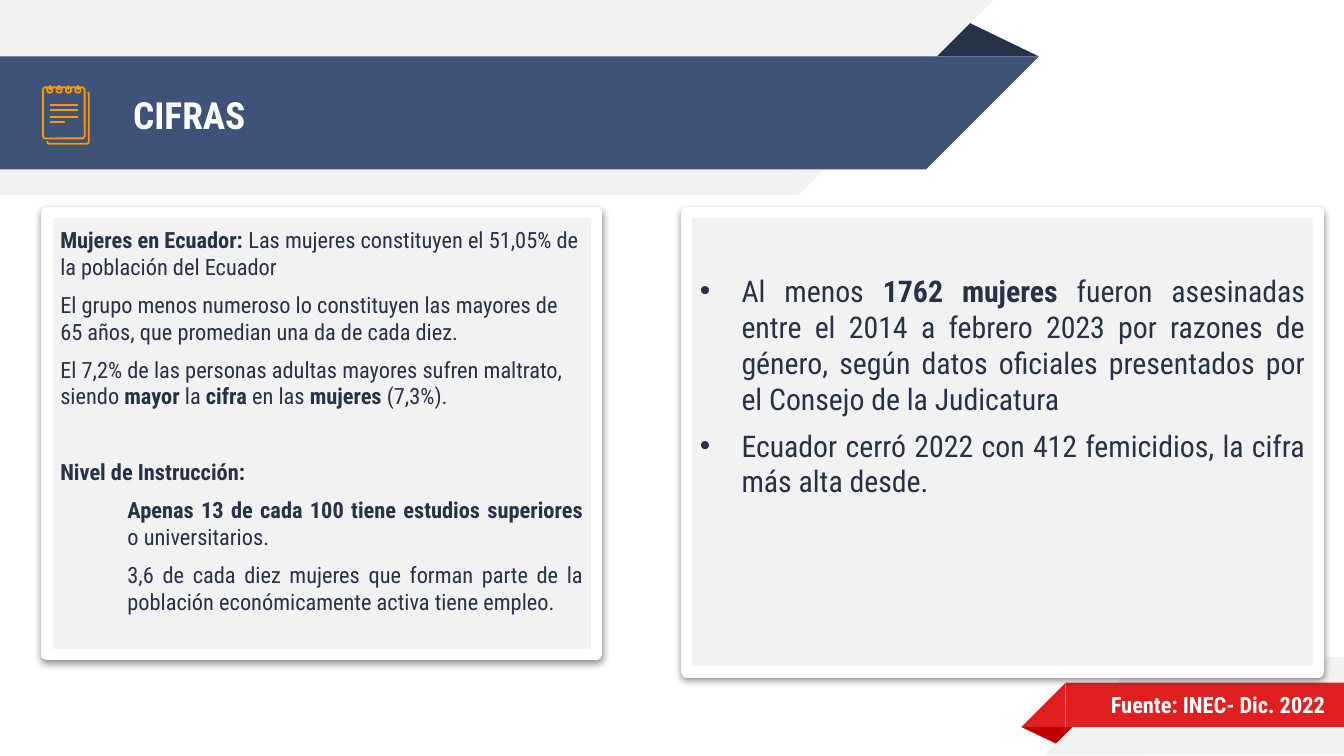
from dataclasses import dataclass

from lxml.etree import SubElement
from pptx import Presentation
from pptx.dml.color import RGBColor
from pptx.enum.shapes import MSO_CONNECTOR as Link, MSO_SHAPE as Preset
from pptx.enum.text import MSO_ANCHOR as Anchor, PP_ALIGN as Align
from pptx.oxml import parse_xml
from pptx.oxml.ns import nsdecls, qn
from pptx.util import Inches, Pt

FONT = "Roboto Condensed"
COLORS = {
    "navy": "263248", "blue": "3F5378", "gray": "F2F2F2", "white": "FFFFFF",
    "red": "E02020", "dark_red": "C00000", "orange": "FF9800",
}


@dataclass(frozen=True)
class Block:
    preset: Preset
    left: float
    top: float
    width: float
    height: float
    color: str
    rotation: int = 0


@dataclass(frozen=True)
class Paragraph:
    spans: tuple[tuple[str, bool], ...]  # text and whether it is bold
    before: float = 6
    indent: float = 0
    justified: bool = False
    bullet: bool = False


def rgb(name: str) -> RGBColor:
    return RGBColor.from_string(COLORS[name])


def draw_block(page, block: Block) -> None:
    shape = page.shapes.add_shape(block.preset, Inches(block.left), Inches(block.top),
                                  Inches(block.width), Inches(block.height))
    shape.shadow.inherit = False
    shape.fill.solid()
    shape.fill.fore_color.rgb = rgb(block.color)
    shape.line.fill.background()
    shape.rotation = block.rotation
    if block.preset == Preset.ISOSCELES_TRIANGLE:
        shape.adjustments[0] = 0.32


def add_span(para, text: str, size: float, color: str, bold: bool) -> None:
    span = para.add_run()
    span.text = text
    span.font.name = FONT
    span.font.size = Pt(size)
    span.font.bold = bold
    span.font.color.rgb = rgb(color)


def set_frame(box, anchor: Anchor, top_inset: float = 0.1):
    frame = box.text_frame
    frame.word_wrap = True
    frame.vertical_anchor = anchor
    frame.margin_left = frame.margin_right = frame.margin_bottom = Inches(0.1)
    frame.margin_top = Inches(top_inset)
    return frame


def set_indent(para, item: Paragraph) -> None:
    props = para._p.get_or_add_pPr()
    props.set("marL", str(Inches(item.indent)))
    if item.bullet:
        props.set("indent", str(-Inches(item.indent)))
        color = SubElement(props, qn("a:buClr"))
        SubElement(color, qn("a:srgbClr"), val=COLORS["navy"])
        SubElement(props, qn("a:buFont"), typeface="Arial")
        SubElement(props, qn("a:buChar"), char="•")


def draw_panel(page, left: float, width: float, height: float, size: float,
               items: list[Paragraph], top_inset: float = 0.1) -> None:
    box = page.shapes.add_textbox(Inches(left), Inches(1.58), Inches(width), Inches(height))
    box.fill.solid()
    box.fill.fore_color.rgb = rgb("gray")
    box.line.color.rgb = rgb("white")
    box.line.width = Pt(6)
    box._element.spPr.append(parse_xml(
        f'<a:effectLst {nsdecls("a")}><a:outerShdw blurRad="50800" dist="19050" dir="5400000">'
        '<a:srgbClr val="000000"><a:alpha val="45000"/></a:srgbClr>'
        '</a:outerShdw></a:effectLst>'))
    frame = set_frame(box, Anchor.TOP, top_inset)
    for index, item in enumerate(items):
        para = frame.add_paragraph() if index else frame.paragraphs[0]
        para.alignment = Align.JUSTIFY if item.justified else Align.LEFT
        para.space_before = Pt(item.before if index else 0)
        set_indent(para, item)
        for text, bold in item.spans:
            add_span(para, text, size, "navy", bold)


def outline(shape) -> None:
    shape.shadow.inherit = False
    shape.fill.background()
    shape.line.color.rgb = rgb("orange")
    shape.line.width = Pt(0.96)


def draw_stroke(page, x1: float, y1: float, x2: float, y2: float) -> None:
    stroke = page.shapes.add_connector(Link.STRAIGHT, Inches(x1), Inches(y1),
                                       Inches(x2), Inches(y2))
    stroke.line.color.rgb = rgb("orange")
    stroke.line.width = Pt(0.96)
    SubElement(stroke._element.spPr, qn("a:effectLst"))


def draw_notepad(page) -> None:
    # Back sheet, then front sheet
    edge = [(0.35, 1.05), (0.36, 1.07), (0.37, 1.07), (0.65, 1.07),
            (0.66, 1.06), (0.66, 1.05), (0.66, 0.7), (0.66, 0.69), (0.65, 0.69)]
    points = [(Inches(x), Inches(y)) for x, y in edge]
    builder = page.shapes.build_freeform(*points[0])
    builder.add_line_segments(points[1:], close=False)
    outline(builder.convert_to_shape())
    sheet = page.shapes.add_shape(Preset.ROUNDED_RECTANGLE, Inches(0.32), Inches(0.65),
                                  Inches(0.31), Inches(0.38))
    sheet.adjustments[0] = 0.06
    outline(sheet)

    # Binding rings with their pins
    for ring in range(4):
        center = 0.37 + 0.07 * ring
        outline(page.shapes.add_shape(Preset.OVAL, Inches(center - 0.02), Inches(0.65),
                                      Inches(0.04), Inches(0.04)))
        draw_stroke(page, center, 0.63, center, 0.67)

    # Written lines
    for y, right in ((0.78, 0.58), (0.82, 0.58), (0.87, 0.58), (0.91, 0.48)):
        draw_stroke(page, 0.37, y, right, y)


BLOCKS = [
    # Title banner
    Block(Preset.ISOSCELES_TRIANGLE, 6.88, 0.14, 0.85, 0.28, "navy"),
    Block(Preset.RECTANGLE, 0, 0, 5.94, 1.45, "gray"),
    Block(Preset.RIGHT_TRIANGLE, 5.94, 0, 1.45, 1.45, "gray", 90),
    Block(Preset.RECTANGLE, 0, 0.42, 6.89, 0.84, "blue"),
    Block(Preset.RIGHT_TRIANGLE, 6.89, 0.42, 0.84, 0.84, "blue", 90),
    # Source ribbon
    Block(Preset.ISOSCELES_TRIANGLE, 7.6, 5.41, 0.43, 0.14, "dark_red", 180),
    Block(Preset.RECTANGLE, 8.5, 4.89, 1.5, 0.73, "gray"),
    Block(Preset.RIGHT_TRIANGLE, 7.77, 4.89, 0.73, 0.73, "gray", 270),
    Block(Preset.RECTANGLE, 7.93, 5.08, 2.08, 0.33, "red"),
    Block(Preset.RIGHT_TRIANGLE, 7.6, 5.08, 0.33, 0.33, "red", 270),
]

POPULATION = [
    Paragraph((("Mujeres en Ecuador: ", True),
               ("Las mujeres constituyen el 51,05% de la población del Ecuador", False))),
    Paragraph((("El grupo menos numeroso lo constituyen las mayores de 65 años, "
                "que promedian una da de cada diez.", False),)),
    Paragraph((("El 7,2% de las personas adultas mayores sufren maltrato, siendo ", False),
               ("mayor", True), (" la ", False), ("cifra", True), (" en las ", False),
               ("mujeres", True), (" (7,3%).", False))),
    Paragraph((("Nivel de Instrucción:", True),), before=26),
    Paragraph((("Apenas 13 de cada 100 tiene estudios superiores", True),
               (" o universitarios.", False)), indent=0.5, justified=True),
    Paragraph((("3,6 de cada diez mujeres que forman parte de la población "
                "económicamente activa tiene empleo.", False),), indent=0.5, justified=True),
]

VIOLENCE = [
    Paragraph((("Al menos ", False), ("1762 mujeres", True),
               (" fueron asesinadas entre el 2014 a febrero 2023 por razones de género, "
                "según datos oficiales presentados por el Consejo de la Judicatura", False)),
              indent=0.31, justified=True, bullet=True),
    Paragraph((("Ecuador cerró 2022 con 412 femicidios, la cifra más alta desde.", False),),
              indent=0.31, justified=True, bullet=True),
]


def main() -> None:
    deck = Presentation()
    deck.slide_width = Inches(10)
    deck.slide_height = deck.slide_width * 9 // 16
    page = deck.slides.add_slide(deck.slide_layouts[5])
    for block in BLOCKS:
        draw_block(page, block)

    # Title, brought in front of its banner
    title = page.shapes.title
    title.left, title.top = Inches(0.89), Inches(0.43)
    title.width, title.height = Inches(5.75), Inches(0.84)
    para = set_frame(title, Anchor.MIDDLE).paragraphs[0]
    para.alignment = Align.LEFT
    add_span(para, "CIFRAS", 20, "white", True)
    title.element.getparent().append(title.element)

    # Text panels
    draw_panel(page, 5.11, 4.7, 3.42, 16, VIOLENCE, top_inset=0.45)
    draw_panel(page, 0.35, 4.09, 3.29, 12, POPULATION)

    # Source
    source = page.shapes.add_textbox(Inches(7.87), Inches(5.07), Inches(2.09), Inches(0.35))
    para = set_frame(source, Anchor.MIDDLE).paragraphs[0]
    para.alignment = Align.RIGHT
    add_span(para, "Fuente: INEC- Dic. 2022", 12, "white", True)

    draw_notepad(page)
    deck.save("out.pptx")


if __name__ == "__main__":
    main()
